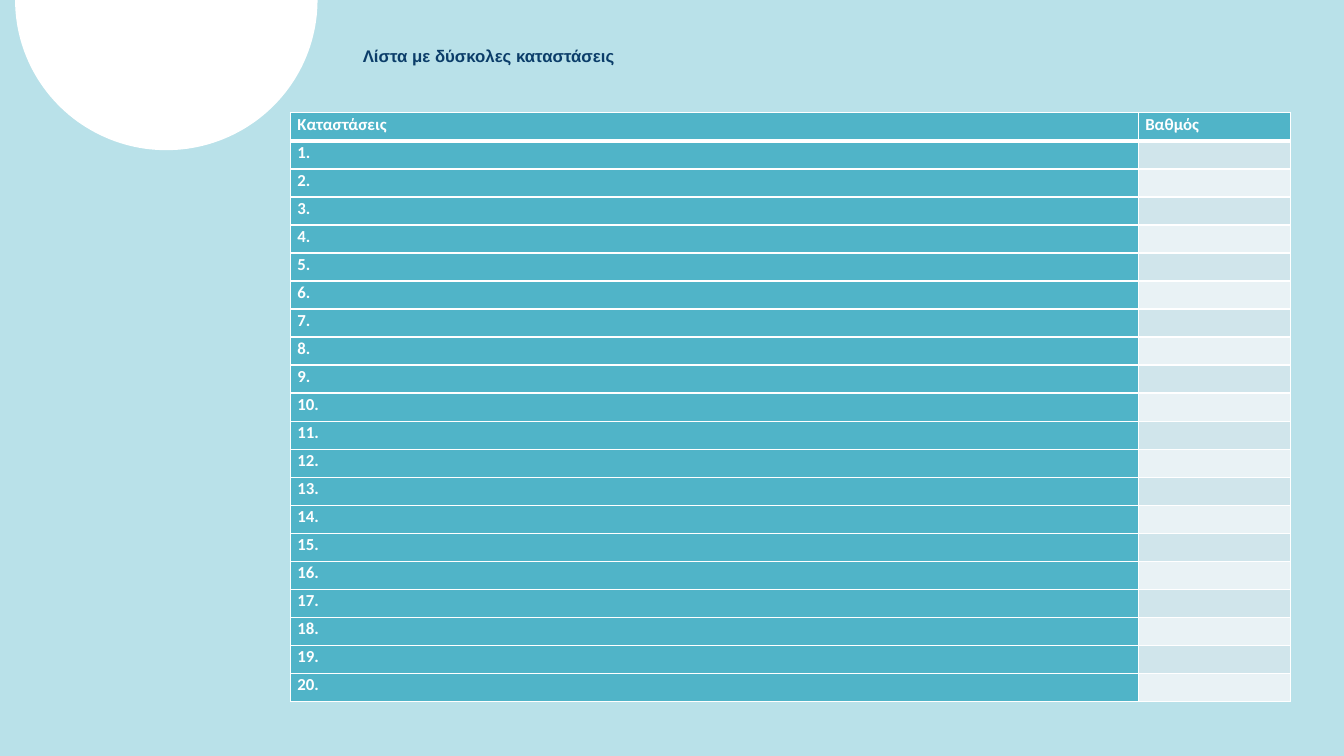
import math

import pptx
import pptx.dml.color
import pptx.enum.text
import pptx.oxml
import pptx.oxml.ns
import pptx.util
from pptx.util import Inches, Pt

# Content
TITLE = "Λίστα με δύσκολες καταστάσεις"
HEADERS = ("Καταστάσεις", "Βαθμός")
SITUATIONS = 20
ROWS = [HEADERS] + [(f"{number}.", "") for number in range(1, SITUATIONS + 1)]

# Look and layout, in inches
BACKGROUND, WHITE, NAVY = "B9E1E9", "FFFFFF", "0B3D69"
TEAL, BANDS = "50B4C8", ("E9F2F5", "D0E5EB")
TABLE_LEFT, TABLE_TOP, TABLE_HEIGHT = 2.88, 1.12, 5.84
COLUMN_WIDTHS = (8.41, 1.51)
CIRCLE_CENTRE, CIRCLE_RADIUS_X, CIRCLE_RADIUS_Y = 1.65, 1.5, 1.49
THIN, THICK = 1, 3


def colour(value):
    return pptx.dml.color.RGBColor.from_string(value)


def paint(target, value):
    target.fill.solid()
    target.fill.fore_color.rgb = colour(value)


def set_font(font, name, value):
    font.name, font.size, font.bold = name, Pt(12), True
    font.color.rgb = colour(value)


def add_borders(cell, top, bottom):
    properties = cell._tc.get_or_add_tcPr()
    for side, points in (("L", THIN), ("R", THIN), ("T", top), ("B", bottom)):
        properties.append(pptx.oxml.parse_xml(
            f'<a:ln{side} {pptx.oxml.ns.nsdecls("a")} w="{Pt(points)}"><a:solidFill>'
            f'<a:srgbClr val="{WHITE}"/></a:solidFill></a:ln{side}>'))


def add_half_circle(slide):
    points = [(Inches(CIRCLE_CENTRE + CIRCLE_RADIUS_X * math.cos(math.radians(angle))),
               Inches(CIRCLE_RADIUS_Y * math.sin(math.radians(angle))))
              for angle in range(0, 181, 2)]
    builder = slide.shapes.build_freeform(*points[0])
    builder.add_line_segments(points[1:], close=True)
    shape = builder.convert_to_shape()
    shape.shadow.inherit = False
    shape.line.fill.background()
    paint(shape, WHITE)


def add_situation_table(slide):
    frame = slide.shapes.add_table(
        len(ROWS), len(HEADERS), Inches(TABLE_LEFT), Inches(TABLE_TOP),
        Inches(sum(COLUMN_WIDTHS)), Inches(TABLE_HEIGHT))
    table = frame.table
    for column, width in zip(table.columns, COLUMN_WIDTHS):
        column.width = Inches(width)
    for row_index, texts in enumerate(ROWS):
        for column_index, text in enumerate(texts):
            cell = table.cell(row_index, column_index)
            cell.margin_left = cell.margin_right = Inches(0.07)
            cell.margin_top = cell.margin_bottom = 0
            add_borders(cell, THICK if row_index == 1 else THIN,
                        THICK if row_index == 0 else THIN)
            paint(cell, TEAL if text else BANDS[row_index % 2])
            paragraph = cell.text_frame.paragraphs[0]
            paragraph.text = text
            paragraph.line_spacing, paragraph.space_after = 1.07, Pt(12)
            set_font(paragraph.font, "Calibri", WHITE)
            if not text:  # keeps the empty line as low as the others
                paragraph._p.append(pptx.oxml.parse_xml(
                    f'<a:endParaRPr {pptx.oxml.ns.nsdecls("a")} sz="1200"/>'))


def add_title(slide):
    box = slide.shapes.add_textbox(Inches(3.5), Inches(0.4), Inches(2.79), Inches(0.3))
    text_frame = box.text_frame
    text_frame.word_wrap = True
    text_frame.vertical_anchor = pptx.enum.text.MSO_ANCHOR.MIDDLE
    text_frame.auto_size = pptx.enum.text.MSO_AUTO_SIZE.SHAPE_TO_FIT_TEXT
    paragraph = text_frame.paragraphs[0]
    paragraph.text = TITLE
    set_font(paragraph.font, "Arial", NAVY)


def main():
    presentation = pptx.Presentation()
    presentation.slide_width, presentation.slide_height = Inches(13.33), Inches(7.5)
    slide = presentation.slides.add_slide(presentation.slide_layouts[6])
    paint(slide.background, BACKGROUND)
    add_half_circle(slide)
    add_situation_table(slide)
    add_title(slide)
    presentation.save("out.pptx")


if __name__ == "__main__":
    main()
